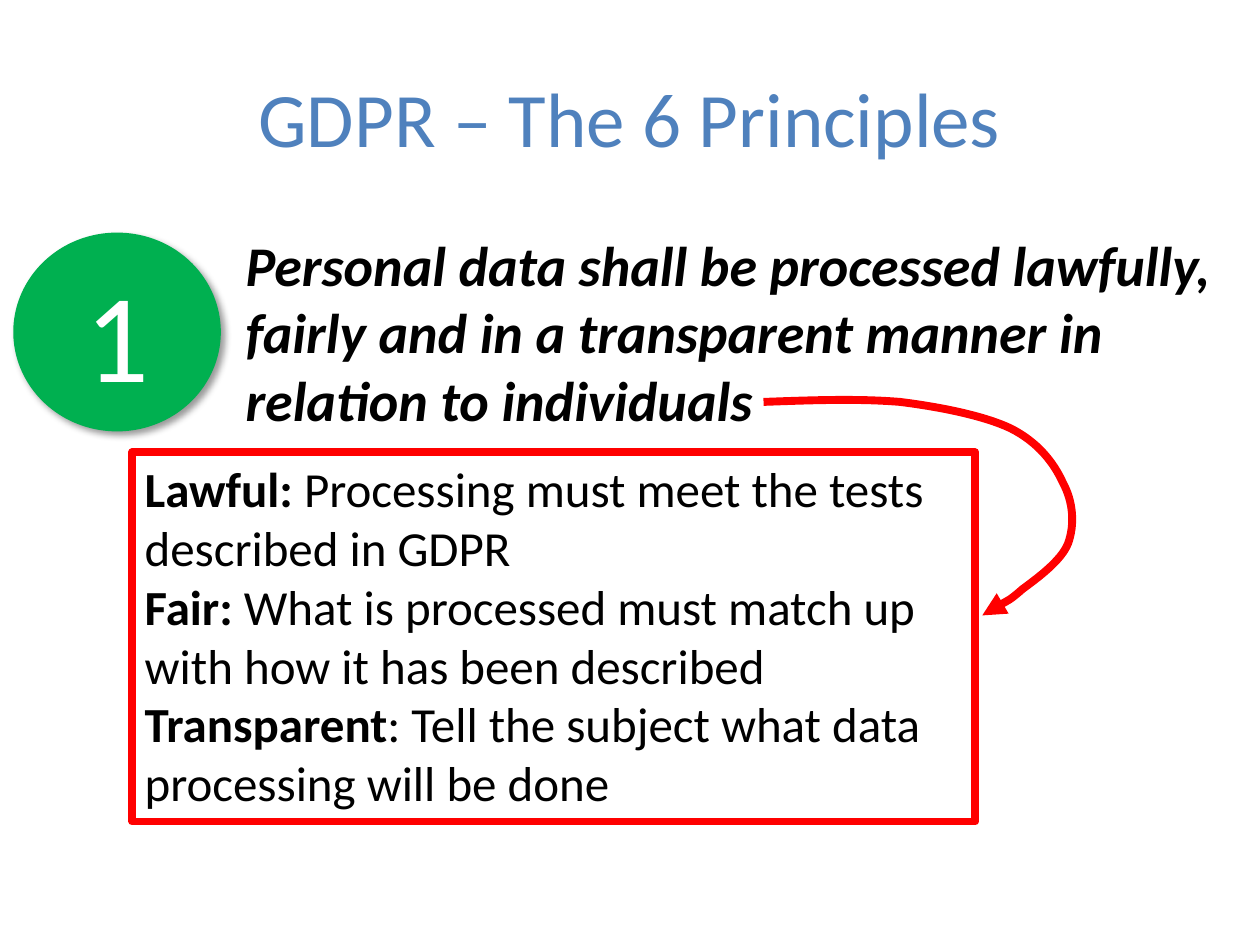
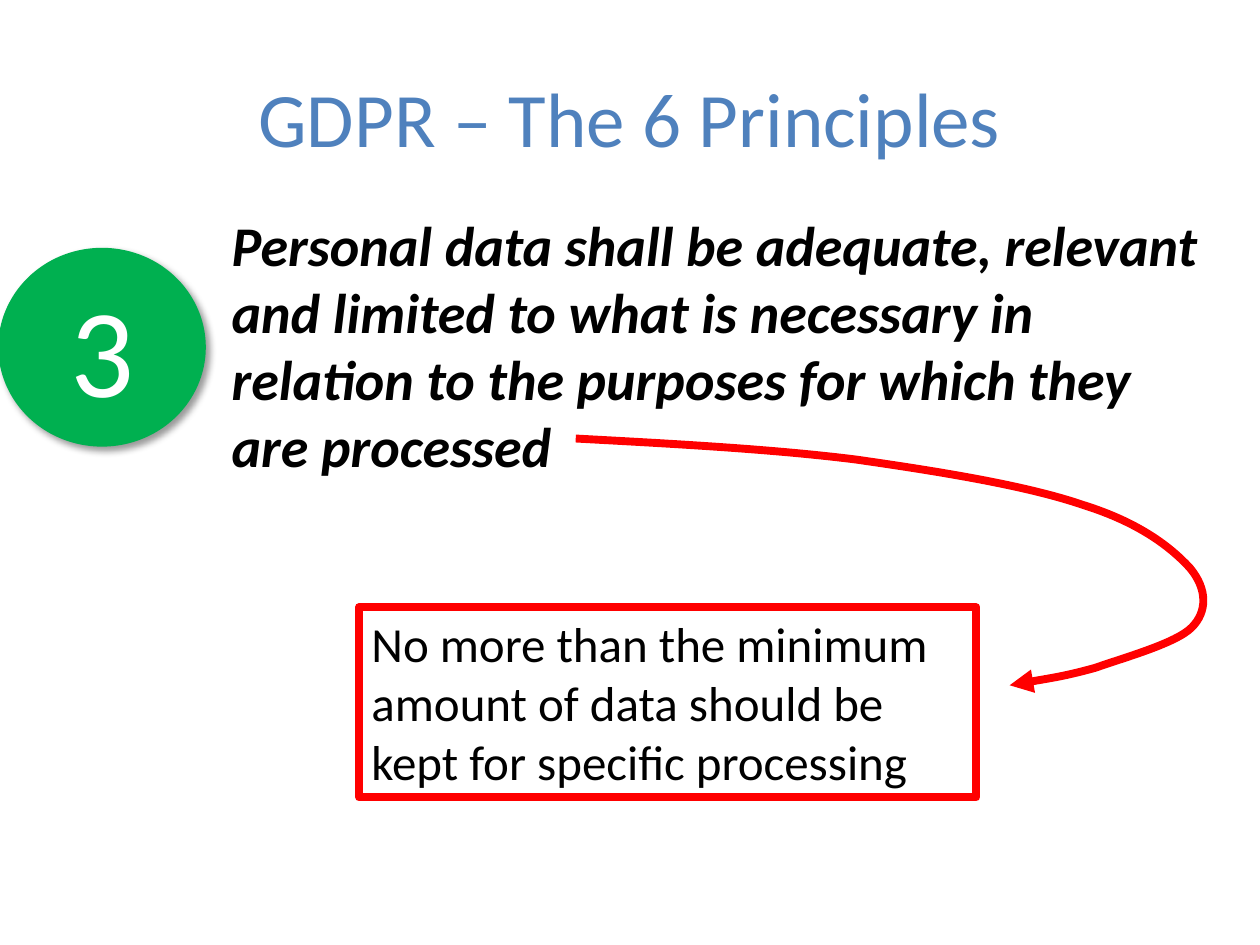
import pptx
import pptx.dml.color
import pptx.enum.shapes
import pptx.enum.text
import pptx.oxml
import pptx.oxml.ns
import pptx.util
from lxml import etree

Pt = pptx.util.Pt
RGBColor = pptx.dml.color.RGBColor
MSO_SHAPE = pptx.enum.shapes.MSO_SHAPE
PP_ALIGN = pptx.enum.text.PP_ALIGN
MSO_ANCHOR = pptx.enum.text.MSO_ANCHOR
qn = pptx.oxml.ns.qn

BLACK = RGBColor(0x00, 0x00, 0x00)
WHITE = RGBColor(0xFF, 0xFF, 0xFF)
BLUE = RGBColor(0x4F, 0x81, 0xBD)
GREEN = RGBColor(0x00, 0xB0, 0x50)
RED = RGBColor(0xFF, 0x00, 0x00)
FONT = "Calibri"
TITLE = "GDPR – The 6 Principles"
TITLE_BOX = (0, 21.6, 720, 90)
BADGE_SIZE = (116.6, 111.6)
RULE = 4.5
SHADOW = (
    f'<a:effectLst {pptx.oxml.ns.nsdecls("a")}>'
    '<a:outerShdw blurRad="50800" dist="38100" dir="2700000" algn="tl" rotWithShape="0">'
    '<a:srgbClr val="000000"><a:alpha val="40000"/></a:srgbClr>'
    '</a:outerShdw></a:effectLst>'
)

PRINCIPLES = [
    {
        "number": "1",
        "badge_at": (8.6, 133.9),
        "statement": "Personal data shall be processed lawfully, fairly and in a "
                     "transparent manner in relation to individuals",
        "statement_box": (133.2, 128.2, 575.3, 123.8),
        "notes": [
            ("Lawful:", " Processing must meet the tests described in GDPR"),
            ("Fair:", " What is processed must match up with how it has been described"),
            ("Transparent", ": Tell the subject what data processing will be done"),
        ],
        "notes_box": (75.6, 258.5, 481.7, 211),
        "arrow_from": (436.3, 229.7),
        "curve": [
            (27, -1), (54, -2), (78, 0),
            (102, 3), (126, 8), (141, 15),
            (157, 23), (166, 35), (171, 46),
            (177, 57), (178, 70), (174, 81),
            (170, 91), (156, 101), (148, 107),
            (140, 114), (125, 122), (125, 122),
        ],
    },
    {
        "number": "3",
        "badge_at": (0, 142.6),
        "statement": "Personal data shall be adequate, relevant and limited to what is "
                     "necessary in relation to the purposes for which they are processed",
        "statement_box": (125.3, 116.6, 575.3, 162.7),
        "notes": [
            ("", "No more than the minimum amount of data should be kept for "
                 "specific processing"),
        ],
        "notes_box": (205.2, 347, 352.8, 108.7),
        "arrow_from": (329, 250.6),
        "curve": [
            (55, 3), (112, 6), (160, 12),
            (209, 19), (258, 27), (290, 38),
            (322, 48), (340, 62), (351, 74),
            (361, 86), (361, 99), (352, 108),
            (343, 117), (314, 125), (297, 131),
            (279, 136), (248, 141), (248, 141),
        ],
    },
]


def add_text(p, text, size, color=BLACK, bold=False, italic=False, align=PP_ALIGN.LEFT):
    """Append a formatted run to a paragraph."""
    p.alignment = align
    r = p.add_run()
    r.text = text
    r.font.name = FONT
    r.font.size = Pt(size)
    r.font.color.rgb = color
    r.font.bold = bold
    r.font.italic = italic


def add_title(s, box):
    """Move and fill the title placeholder."""
    sp = s.shapes.title
    sp.left, sp.top, sp.width, sp.height = map(Pt, box)
    tf = sp.text_frame
    tf.vertical_anchor = MSO_ANCHOR.MIDDLE
    add_text(tf.paragraphs[0], TITLE, 44, color=BLUE, align=PP_ALIGN.CENTER)


def add_badge(s, box, number):
    """Draw the numbered green circle with its soft shadow."""
    sp = s.shapes.add_shape(MSO_SHAPE.OVAL, *map(Pt, box))
    sp.fill.solid()
    sp.fill.fore_color.rgb = GREEN
    sp.line.color.rgb = GREEN
    sp.line.width = Pt(2)
    sp._element.spPr.append(pptx.oxml.parse_xml(SHADOW))
    tf = sp.text_frame
    tf.vertical_anchor = MSO_ANCHOR.MIDDLE
    add_text(tf.paragraphs[0], number, 72, color=WHITE, align=PP_ALIGN.CENTER)


def add_statement(s, box, text):
    """Write the wording of the principle."""
    tf = s.shapes.add_textbox(*map(Pt, box)).text_frame
    tf.word_wrap = True
    add_text(tf.paragraphs[0], text, 32, bold=True, italic=True)


def outline(sp):
    """Give a shape the red rule and no fill or shadow."""
    sp.shadow.inherit = False
    sp.fill.background()
    sp.line.color.rgb = RED
    sp.line.width = Pt(RULE)


def add_notes(s, box, notes):
    """Draw the red box that explains the principle."""
    sp = s.shapes.add_shape(MSO_SHAPE.RECTANGLE, *map(Pt, box))
    outline(sp)
    tf = sp.text_frame
    tf.word_wrap = True
    tf.vertical_anchor = MSO_ANCHOR.TOP
    for i, (term, meaning) in enumerate(notes):
        p = tf.add_paragraph() if i else tf.paragraphs[0]
        if term:
            add_text(p, term, 28, bold=True)
        add_text(p, meaning, 28)


def add_curved_arrow(s, start, curve):
    """Draw cubic curves, three points each relative to the start, with an arrowhead."""
    x, y = start
    builder = s.shapes.build_freeform(Pt(x), Pt(y))
    builder.add_line_segments([(Pt(x + dx), Pt(y + dy)) for dx, dy in curve], close=False)
    sp = builder.convert_to_shape()
    outline(sp)
    path = next(sp._element.iter(qn("a:path")))
    lines = path.findall(qn("a:lnTo"))
    for i in range(0, len(lines), 3):
        bezier = etree.SubElement(path, qn("a:cubicBezTo"))
        for line in lines[i:i + 3]:
            bezier.append(line[0])
            path.remove(line)
    etree.SubElement(sp.line._get_or_add_ln(), qn("a:tailEnd"), type="triangle")


def add_principle(prs, principle):
    """Build one principle slide."""
    s = prs.slides.add_slide(prs.slide_layouts[5])
    add_title(s, TITLE_BOX)
    add_badge(s, principle["badge_at"] + BADGE_SIZE, principle["number"])
    add_statement(s, principle["statement_box"], principle["statement"])
    add_notes(s, principle["notes_box"], principle["notes"])
    add_curved_arrow(s, principle["arrow_from"], principle["curve"])


def main():
    """Build and save the presentation."""
    prs = pptx.Presentation()
    prs.slide_width, prs.slide_height = Pt(720), Pt(540)
    for principle in PRINCIPLES:
        add_principle(prs, principle)
    prs.save("out.pptx")


if __name__ == "__main__":
    main()
